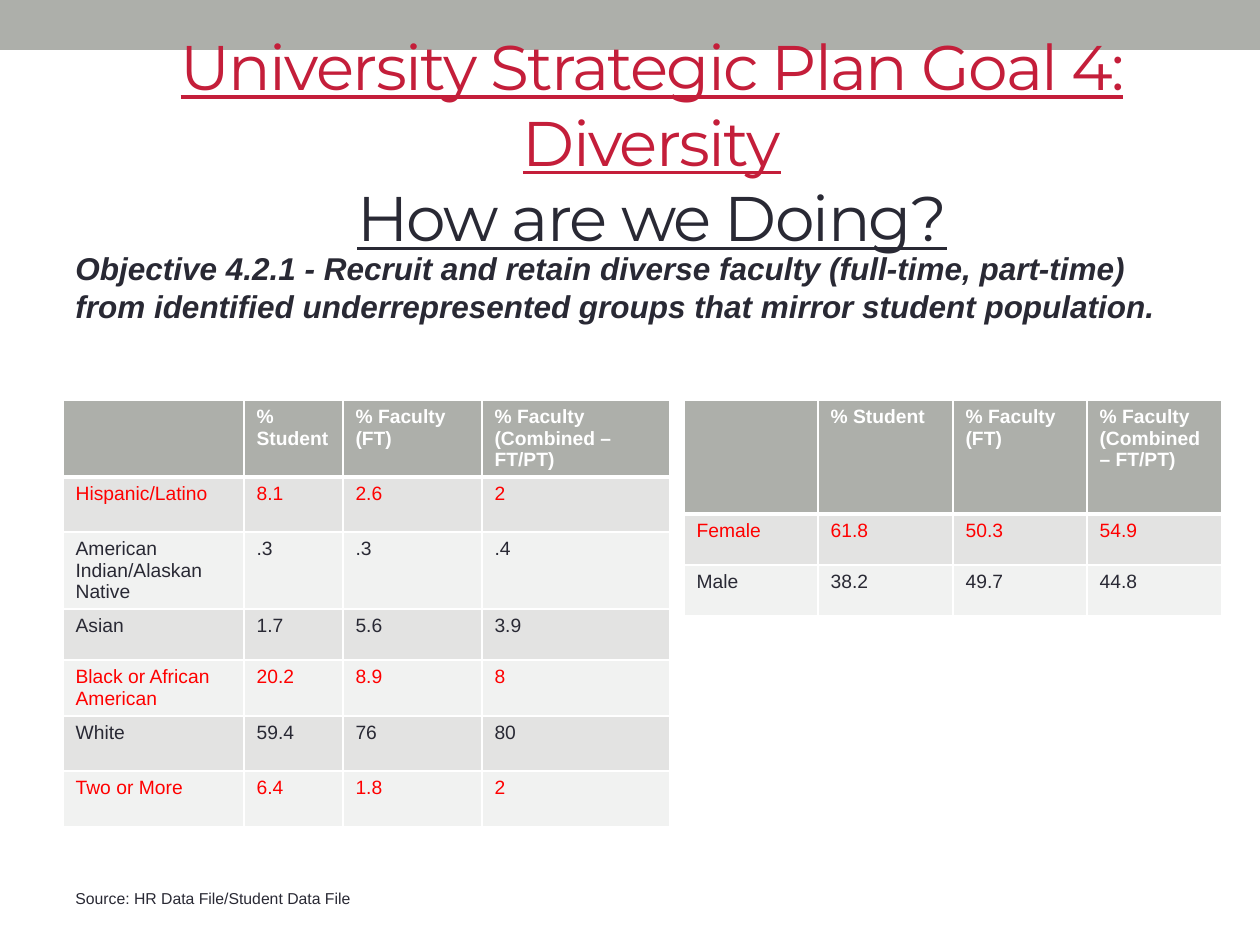
from lxml.etree import SubElement as Sub
from pptx import Presentation
from pptx.dml.color import RGBColor
from pptx.enum.shapes import MSO_SHAPE as Shape
from pptx.enum.text import MSO_ANCHOR as Anchor, MSO_AUTO_SIZE as Fit, PP_ALIGN as Align
from pptx.oxml.ns import qn
from pptx.util import Pt

SCALE = 914400 / 126
RED = RGBColor(0xFF, 0x00, 0x00)
CRIMSON = RGBColor(0xC4, 0x1E, 0x3A)
INK = RGBColor(0x29, 0x29, 0x34)
GRAY = RGBColor(0xAD, 0xAF, 0xAA)
WHITE = RGBColor(0xFF, 0xFF, 0xFF)
BANDS = (RGBColor(0xF1, 0xF2, 0xF1), RGBColor(0xE3, 0xE3, 0xE2))
HEAD = ("", "% Student", "% Faculty (FT)", "% Faculty (Combined – FT/PT)")
GROUPS = (
    ("Hispanic/Latino", "8.1", "2.6", "2"),
    ("American Indian/Alaskan Native", ".3", ".3", ".4"),
    ("Asian", "1.7", "5.6", "3.9"),
    ("Black or African American", "20.2", "8.9", "8"),
    ("White", "59.4", "76", "80"),
    ("Two or More", "6.4", "1.8", "2"),
)
GENDERS = (("Female", "61.8", "50.3", "54.9"), ("Male", "38.2", "49.7", "44.8"))
GAPS = {"Hispanic/Latino", "Black or African American", "Two or More", "Female"}


def px(num):
    """Turn pixels into EMU."""
    return round(num * SCALE)


def style(font, size, color, name="Arial", bold=False, italic=False):
    """Format one font."""
    font.name, font.size, font.color.rgb = name, Pt(size), color
    font.bold, font.italic = bold, italic


def add_head(slide, box):
    """Place the top band and the title over it."""
    title = slide.shapes.title
    band = slide.shapes.add_shape(Shape.RECTANGLE, 0, 0, px(1260), px(50))
    band.shadow.inherit = False
    band.fill.solid()
    band.fill.fore_color.rgb = GRAY
    band.line.fill.background()
    title.element.addprevious(band.element)
    title.left, title.top, title.width, title.height = map(px, box)
    frame = title.text_frame
    frame.text = "University Strategic Plan Goal 4: Diversity\vHow are we Doing?"
    frame.auto_size, frame.vertical_anchor = Fit.NONE, Anchor.MIDDLE
    para = frame.paragraphs[0]
    para.alignment = Align.CENTER
    for run, color in zip(para.runs, (CRIMSON, INK)):
        style(run.font, 36, color, "Montserrat")
        run.font.underline = True
        run.font._element.set("spc", "-100")


def add_text(slide, box, text, size, **look):
    """Place a wrapped text box."""
    frame = slide.shapes.add_textbox(*map(px, box)).text_frame
    frame.word_wrap = True
    frame.text = text
    style(frame.paragraphs[0].runs[0].font, size, INK, **look)


def add_edges(cell, top, low):
    """Draw white borders round a cell."""
    props = cell._tc.get_or_add_tcPr()
    for side, width in (("L", 1), ("R", 1), ("T", top), ("B", low)):
        line = Sub(props, qn(f"a:ln{side}"), w=str(Pt(width)))
        fill = Sub(line, qn("a:solidFill"))
        Sub(fill, qn("a:srgbClr"), val=str(WHITE))


def add_grid(slide, left, top, cols, rows, data):
    """Place a banded table with a gray header row."""
    box = map(px, (left, top, sum(cols), sum(rows)))
    grid = slide.shapes.add_table(len(rows), len(cols), *box).table
    for col, width in zip(grid.columns, cols):
        col.width = px(width)
    for row, (height, line) in enumerate(zip(rows, (HEAD, *data))):
        grid.rows[row].height = px(height)
        ink = WHITE if row == 0 else RED if line[0] in GAPS else INK
        for col, text in enumerate(line):
            cell = grid.cell(row, col)
            add_edges(cell, 3 if row == 1 else 1, 3 if row == 0 else 1)
            cell.fill.solid()
            cell.fill.fore_color.rgb = BANDS[row % 2] if row else GRAY
            cell.text = text
            style(cell.text_frame.paragraphs[0].font, 11, ink, bold=row == 0)
            for run in cell.text_frame.paragraphs[0].runs:
                style(run.font, 11, ink, bold=row == 0)


def main():
    """Build and save the slide."""
    deck = Presentation()
    deck.slide_width, deck.slide_height = px(1260), px(945)
    slide = deck.slides.add_slide(deck.slide_layouts[5])
    add_head(slide, (63, 73, 1178, 136))
    add_grid(slide, 63, 400, (181, 99, 139, 188), (76, 55, 77, 51, 56, 55, 56), GROUPS)
    add_grid(slide, 684, 400, (134, 135, 134, 135), (114, 51, 51), GENDERS)
    add_text(slide, (63, 243, 1142, 89),
             "Objective 4.2.1 - Recruit and retain diverse faculty (full-time, part-time) "
             "from identified underrepresented groups that mirror student population.",
             18, bold=True, italic=True)
    add_text(slide, (63, 883, 397, 32), "Source: HR Data File/Student Data File", 9)
    deck.save("out.pptx")


if __name__ == "__main__":
    main()
